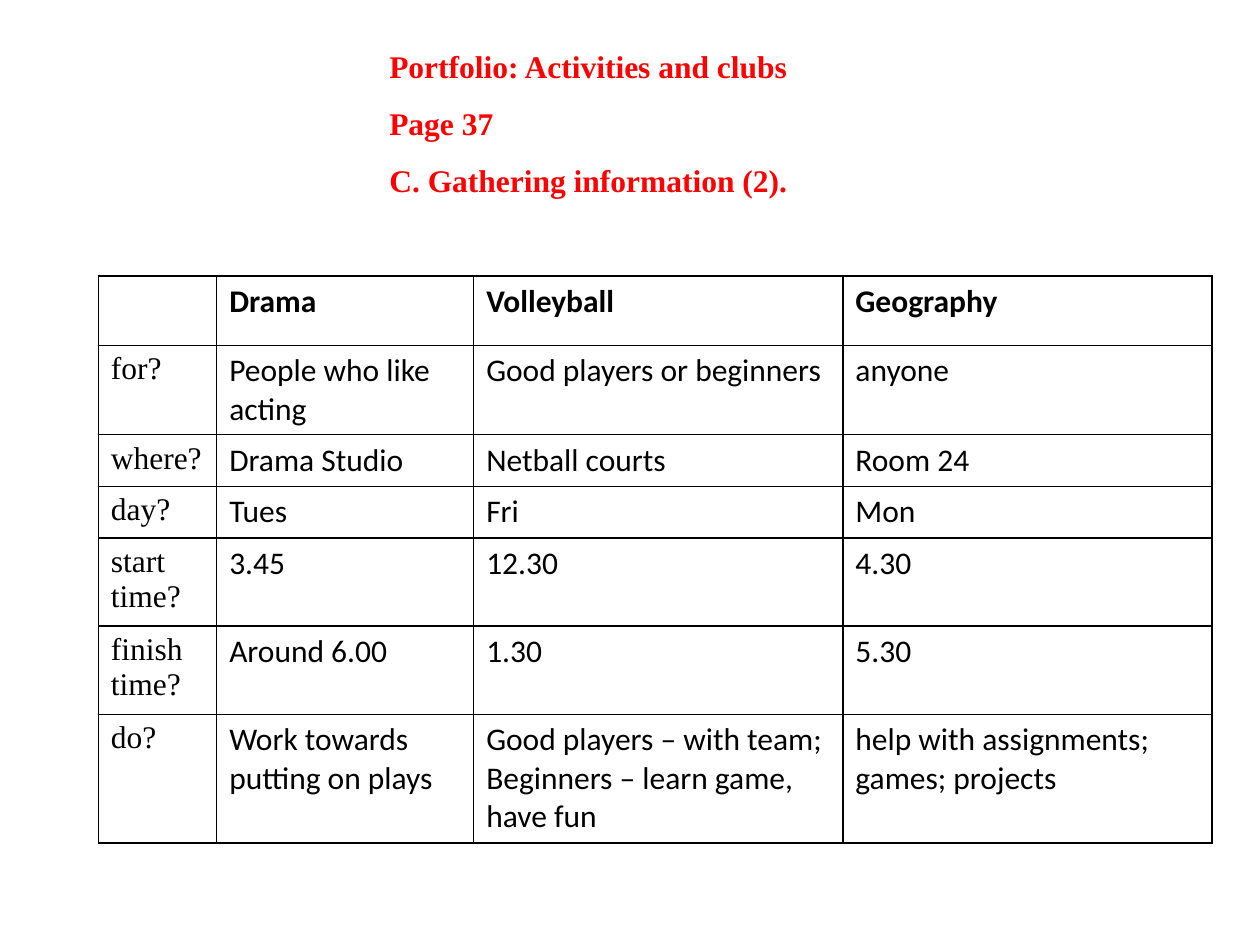
from lxml.etree import SubElement
from pptx import Presentation
from pptx.dml.color import RGBColor
from pptx.oxml.ns import qn
from pptx.util import Inches, Pt

COLORS = {"title": "FF0000", "text": "000000", "border": "000000", "cell": "FFFFFF"}
SERIF, SANS = "Times New Roman", "Calibri"

TITLE_LINES = [
    "Portfolio: Activities and clubs",
    "Page 37",
    "C. Gathering information (2).",
]
CLUB_ROWS = [
    ["", "Drama", "Volleyball", "Geography"],
    ["for?", "People who like\nacting", "Good players or beginners", "anyone"],
    ["where?", "Drama Studio", "Netball courts", "Room 24"],
    ["day?", "Tues", "Fri", "Mon"],
    ["start time?", "3.45", "12.30", "4.30"],
    ["finish time?", "Around 6.00", "1.30", "5.30"],
    [
        "do?",
        "Work towards\nputting on plays",
        "Good players – with team;\nBeginners – learn game,\nhave fun",
        "help with assignments;\ngames; projects",
    ],
]
COLUMN_WIDTHS = [0.94, 2.04, 2.93, 2.93]
ROW_HEIGHTS = [0.55, 0.71, 0.41, 0.41, 0.65, 0.65, 1.02]


class SlideBuilder:
    def __init__(self, slide, size=18):
        self.slide = slide
        self.size = Pt(size)

    def style(self, text_frame, font_name, color, bold=False):
        for paragraph in text_frame.paragraphs:
            font = paragraph.font
            for run in paragraph.runs:
                font = run.font
                font.color.rgb = RGBColor.from_string(COLORS[color])
            font.name, font.size, font.bold = font_name, self.size, bold

    def title(self, lines, left, top, width, height):
        text_frame = self.slide.shapes.add_textbox(
            Inches(left), Inches(top), Inches(width), Inches(height)
        ).text_frame
        text_frame.word_wrap = True
        text_frame.margin_left = text_frame.margin_right = 0
        text_frame.margin_top = text_frame.margin_bottom = 0
        text_frame.text = "\n".join(lines)
        self.style(text_frame, SERIF, "title", bold=True)
        for paragraph in text_frame.paragraphs:
            paragraph.line_spacing = Pt(32.5)

    def table(self, rows, left, top, widths, heights):
        table = self.slide.shapes.add_table(
            len(rows), len(widths), Inches(left), Inches(top),
            Inches(sum(widths)), Inches(sum(heights)),
        ).table
        table.horz_banding = False
        for column, width in zip(table.columns, widths):
            column.width = Inches(width)
        for row, height in zip(table.rows, heights):
            row.height = Inches(height)
        for row_index, row in enumerate(rows):
            for column_index, text in enumerate(row):
                cell = table.cell(row_index, column_index)
                cell.text_frame.text = text
                font_name = SERIF if column_index == 0 else SANS
                self.style(cell.text_frame, font_name, "text", bold=row_index == 0)
                self.cell_borders(cell)
                cell.fill.solid()
                cell.fill.fore_color.rgb = RGBColor.from_string(COLORS["cell"])

    def cell_borders(self, cell):
        properties = cell._tc.get_or_add_tcPr()
        for side in ("a:lnL", "a:lnR", "a:lnT", "a:lnB"):
            line = SubElement(properties, qn(side), w=str(Pt(1)))
            fill = SubElement(line, qn("a:solidFill"))
            SubElement(fill, qn("a:srgbClr"), val=COLORS["border"])


def main():
    presentation = Presentation()
    presentation.slide_width, presentation.slide_height = Inches(10), Inches(7.5)
    slide = presentation.slides.add_slide(presentation.slide_layouts[6])
    builder = SlideBuilder(slide)
    builder.title(TITLE_LINES, 3.09, 0.22, 5, 1.4)
    builder.table(CLUB_ROWS, 0.78, 2.19, COLUMN_WIDTHS, ROW_HEIGHTS)
    presentation.save("out.pptx")


if __name__ == "__main__":
    main()
